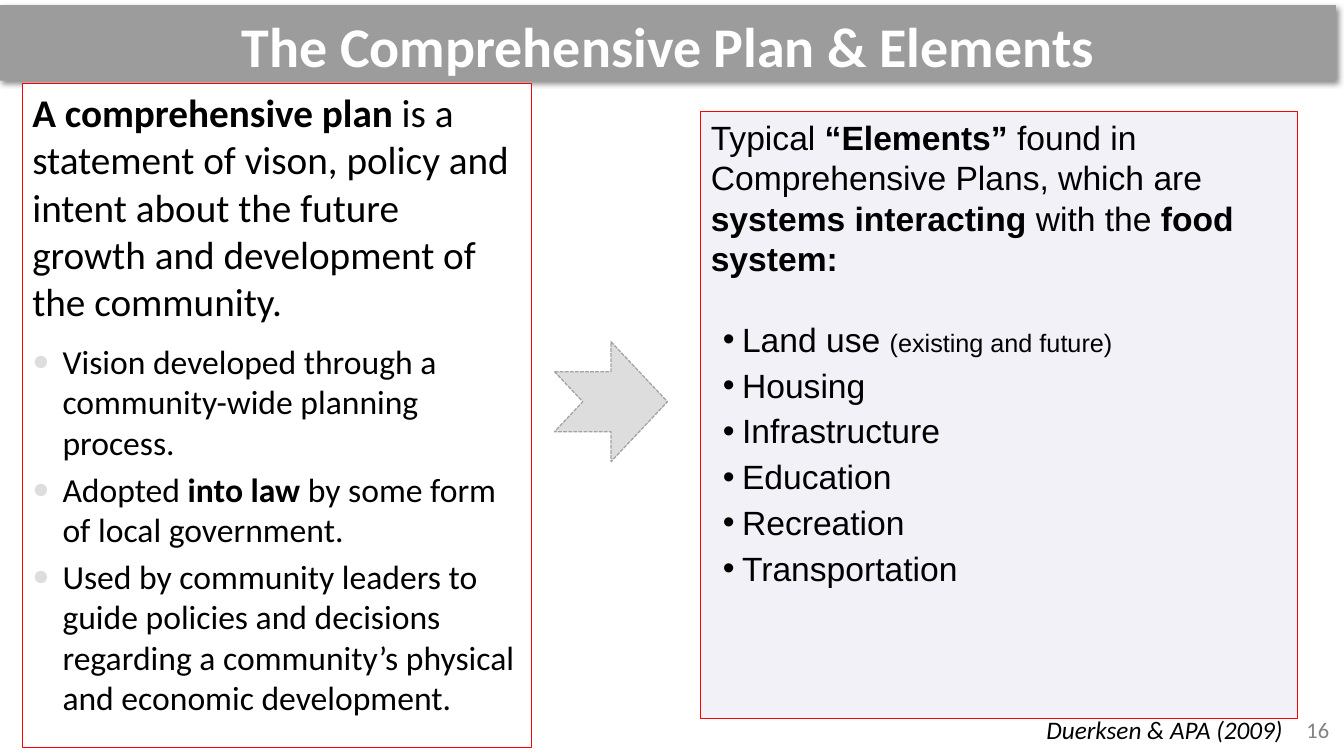
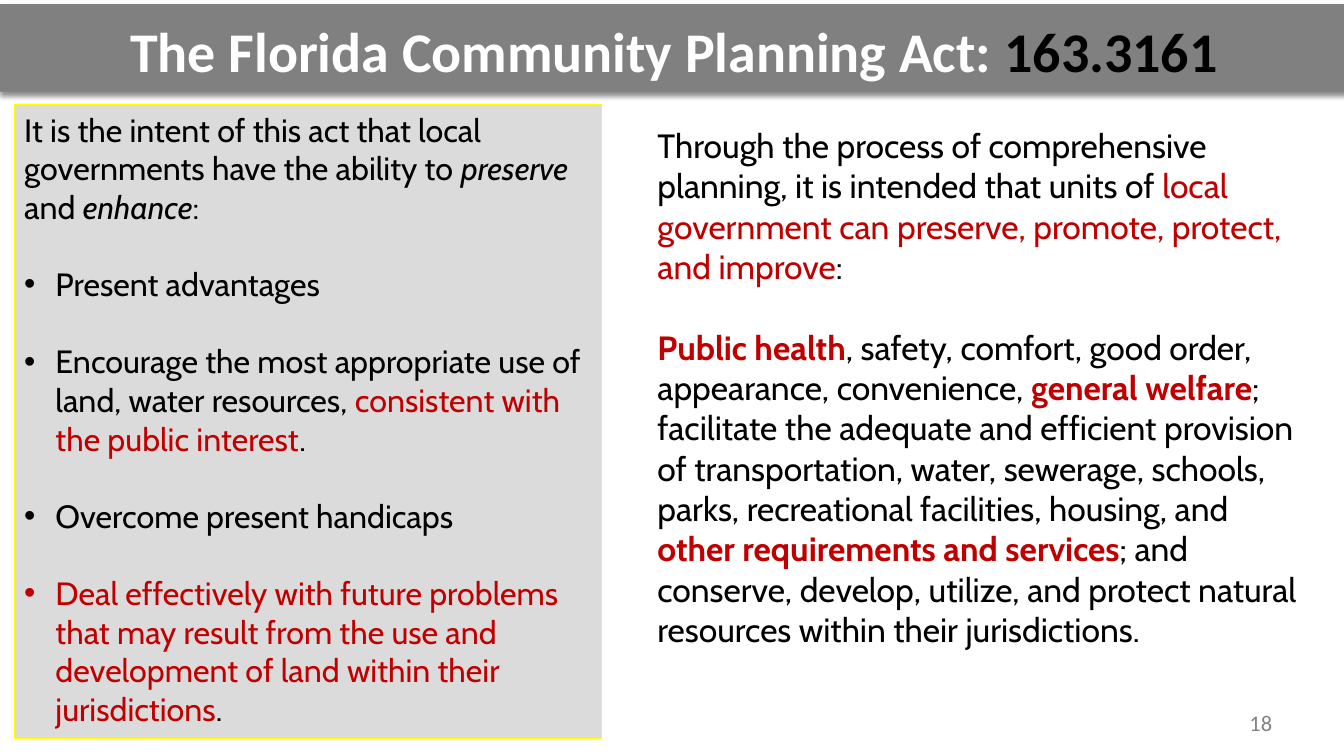
from dataclasses import dataclass
from typing import Optional

from lxml import etree
from pptx import Presentation
from pptx import util as u
from pptx.dml.color import RGBColor
from pptx.enum import dml, shapes, text
from pptx.oxml.ns import qn

BLACK, WHITE, RED = "000000", "FFFFFF", "C00000"
BORDER_RED, YELLOW = "FF0000", "FFFF00"
PALE_GREY, NUMBER_GREY = "DDDDDD", "838383"
TWO_CONTENT = 3


@dataclass(frozen=True)
class Span:
    words: str
    bold: bool = False
    italic: bool = False
    color: str = BLACK
    size: Optional[float] = None


@dataclass(frozen=True)
class Bullet:
    symbol: str
    margin: float
    hang: float
    color: Optional[str] = None
    percent: int = 100


@dataclass(frozen=True)
class Para:
    spans: tuple[Span, ...]
    size: float
    bullet: Optional[Bullet] = None
    before: float = 0
    after: float = 0


@dataclass(frozen=True)
class Panel:
    area: tuple[float, float, float, float]
    font: str
    paras: tuple[Para, ...]
    fill: Optional[str] = None
    border: Optional[str] = None


@dataclass(frozen=True)
class Band:
    area: tuple[float, float, float, float]
    fill: str
    shadow_angle: int
    spans: tuple[Span, ...]


def rgb(color: str) -> RGBColor:
    return RGBColor.from_string(color)


def place(shape, area: tuple[float, float, float, float]) -> None:
    shape.left, shape.top, shape.width, shape.height = map(u.Inches, area)


def paint(shape, fill: Optional[str], border: Optional[str], width: float = 0.75) -> None:
    if fill:
        shape.fill.solid()
        shape.fill.fore_color.rgb = rgb(fill)
    if border:
        shape.line.color.rgb = rgb(border)
        shape.line.width = u.Pt(width)


def add_spans(para, spans: tuple[Span, ...], font: str, size: float) -> None:
    for item in spans:
        span = para.add_run()
        span.text = item.words
        span.font.name = font
        span.font.size = u.Pt(item.size or size)
        span.font.bold, span.font.italic = item.bold, item.italic
        span.font.color.rgb = rgb(item.color)


def set_bullet(para, bullet: Optional[Bullet]) -> None:
    props = para._p.get_or_add_pPr()
    props.set("marL", str(u.Inches(bullet.margin) if bullet else 0))
    props.set("indent", str(-u.Inches(bullet.hang) if bullet else 0))
    if bullet is None:
        etree.SubElement(props, qn("a:buNone"))
        return
    if bullet.color:
        holder = etree.SubElement(props, qn("a:buClr"))
        etree.SubElement(holder, qn("a:srgbClr"), val=bullet.color)
    etree.SubElement(props, qn("a:buSzPct"), val=str(bullet.percent * 1000))
    etree.SubElement(props, qn("a:buFont"), typeface="Arial")
    etree.SubElement(props, qn("a:buChar"), char=bullet.symbol)


def add_shadow(shape, angle: int) -> None:
    effects = etree.SubElement(shape._element.spPr, qn("a:effectLst"))
    shadow = etree.SubElement(
        effects, qn("a:outerShdw"), blurRad=str(u.Pt(4)), dist=str(u.Pt(2)),
        dir=str(angle * 60000), algn="ctr", rotWithShape="0")
    color = etree.SubElement(shadow, qn("a:srgbClr"), val=BLACK)
    etree.SubElement(color, qn("a:alpha"), val="45000")


def draw_band(page, band: Band) -> None:
    title = page.shapes.title
    place(title, band.area)
    paint(title, band.fill, None)
    add_shadow(title, band.shadow_angle)
    frame = title.text_frame
    frame.auto_size = text.MSO_AUTO_SIZE.NONE
    frame.vertical_anchor = text.MSO_ANCHOR.MIDDLE
    # Line sits slightly below the middle of the band
    frame.margin_top, frame.margin_bottom = u.Inches(0.05), u.Inches(0)
    para = frame.paragraphs[0]
    para.alignment = text.PP_ALIGN.CENTER
    add_spans(para, band.spans, "Calibri", 40)


def draw_panel(body, panel: Panel) -> None:
    place(body, panel.area)
    paint(body, panel.fill, panel.border)
    frame = body.text_frame
    frame.word_wrap = True
    frame.auto_size = text.MSO_AUTO_SIZE.NONE
    frame.vertical_anchor = text.MSO_ANCHOR.TOP
    for index, item in enumerate(panel.paras):
        para = frame.add_paragraph() if index else frame.paragraphs[0]
        set_bullet(para, item.bullet)
        para.space_before, para.space_after = u.Pt(item.before), u.Pt(item.after)
        add_spans(para, item.spans, panel.font, item.size)


def draw_label(page, area: tuple[float, float, float, float], span: Span,
               align: text.PP_ALIGN, margin: float) -> None:
    box = page.shapes.add_textbox(*map(u.Inches, area))
    frame = box.text_frame
    frame.word_wrap = True
    frame.vertical_anchor = text.MSO_ANCHOR.MIDDLE
    frame.margin_left = frame.margin_right = u.Inches(margin)
    frame.margin_top = frame.margin_bottom = u.Inches(0.05)
    frame.paragraphs[0].alignment = align
    add_spans(frame.paragraphs[0], (span,), "Calibri", 16)


def add_page(deck, band: Band, panels: tuple[Panel, Panel], number: str,
             number_area: tuple[float, float, float, float]):
    page = deck.slides.add_slide(deck.slide_layouts[TWO_CONTENT])
    draw_band(page, band)
    for slot, panel in enumerate(panels, start=1):
        draw_panel(page.placeholders[slot], panel)
    draw_label(page, number_area, Span(number, color=NUMBER_GREY),
               text.PP_ALIGN.CENTER, 0.05)
    return page


def build_elements(deck) -> None:
    dot = Bullet("●", 0.3, 0.3, PALE_GREY, 85)
    point = Bullet("•", 0.31, 0.19)
    plan = Panel((0.22, 0.83, 5.05, 6.59), "Calibri", (
        Para((Span("A comprehensive plan ", bold=True),
              Span("is a statement of vison, policy and intent about the future "
                   "growth and development of the community.")), 28),
        Para((Span("Vision developed through a community-wide planning process."),),
             24, dot, before=12),
        Para((Span("Adopted "), Span("into law ", bold=True),
              Span("by some form of local government.")), 24, dot, before=4.8),
        Para((Span("Used by community leaders to guide policies and decisions "
                   "regarding a community’s physical and economic development."),),
             24, dot, before=4.8),
    ), WHITE, BORDER_RED)
    topics = ("Housing", "Infrastructure", "Education", "Recreation", "Transportation")
    elements = Panel((6.95, 1.11, 5.92, 6.02), "Arial", (
        Para((Span("Typical "), Span("“Elements” ", bold=True),
              Span("found in Comprehensive Plans, which are "),
              Span("systems interacting", bold=True), Span(" with the "),
              Span("food system:", bold=True)), 24),
        Para((Span("Land use "), Span("(existing and future)", size=18)),
             24, point, before=28.8, after=4),
        *(Para((Span(topic),), 24, point, after=4) for topic in topics),
    ), "F3F1F8", BORDER_RED)
    band = Band((0, 0.05, 13.25, 0.75), "9C9C9C", 45,
                (Span("The Comprehensive Plan & Elements", bold=True, color=WHITE),))
    page = add_page(deck, band, (plan, elements), "16", (12.82, 7, 0.5, 0.48))

    # Source credit
    draw_label(page, (10.28, 7.04, 2.59, 0.4),
               Span("Duerksen & APA (2009)", italic=True, size=18),
               text.PP_ALIGN.LEFT, 0.1)

    # Arrow from the plan to its elements
    arrow = page.shapes.add_shape(shapes.MSO_SHAPE.NOTCHED_RIGHT_ARROW,
                                  *map(u.Inches, (5.5, 3.39, 1.12, 1.19)))
    arrow.shadow.inherit = False
    paint(arrow, PALE_GREY, "A3A3A3", 0.9)
    arrow.line.dash_style = dml.MSO_LINE.SQUARE_DOT


def build_planning_act(deck) -> None:
    point = Bullet("•", 0.31, 0.31)
    goals = (
        (Span("Present advantages"),),
        (Span("Encourage the most appropriate use of land, water resources, "),
         Span("consistent with the public interest", color=RED), Span(".")),
        (Span("Overcome present handicaps"),),
        (Span("Deal effectively with future problems that may result from the use "
              "and development of land within their jurisdictions", color=RED),
         Span(".")),
    )
    intent = Panel((0.14, 1.04, 5.83, 6.29), "Cabin", (
        Para((Span("It is the intent of this act that local governments have the "
                   "ability to "), Span("preserve", italic=True), Span(" and "),
              Span("enhance", italic=True), Span(":")), 23),
        *(Para(goal, 23, point, before=27.6) for goal in goals),
    ), "DBDBDB", YELLOW)
    process = Panel((6.42, 1.19, 6.67, 5.76), "Cabin", (
        Para((Span("Through the process of comprehensive planning, it is intended "
                   "that units of "),
              Span("local government can preserve, promote, protect, and improve",
                   color=RED), Span(":")), 24),
        Para((Span("Public health", bold=True, color=RED),
              Span(", safety, comfort, good order, appearance, convenience, "),
              Span("general welfare", bold=True, color=RED),
              Span("; facilitate the adequate and efficient provision of "
                   "transportation, water, sewerage, schools, parks, recreational "
                   "facilities, housing, and "),
              Span("other requirements and services", bold=True, color=RED),
              Span("; and conserve, develop, utilize, and protect natural resources "
                   "within their jurisdictions.")), 24, before=28.8),
    ))
    band = Band((0, 0.04, 13.37, 0.87), "808080", 90,
                (Span("The Florida Community Planning Act: ", bold=True, color=WHITE),
                 Span("163.3161", bold=True)))
    add_page(deck, band, (intent, process), "18", (12.17, 6.93, 0.67, 0.48))


def main() -> None:
    deck = Presentation()
    deck.slide_width, deck.slide_height = u.Inches(13.33), u.Inches(7.5)
    build_elements(deck)
    build_planning_act(deck)
    deck.save("out.pptx")


if __name__ == "__main__":
    main()
